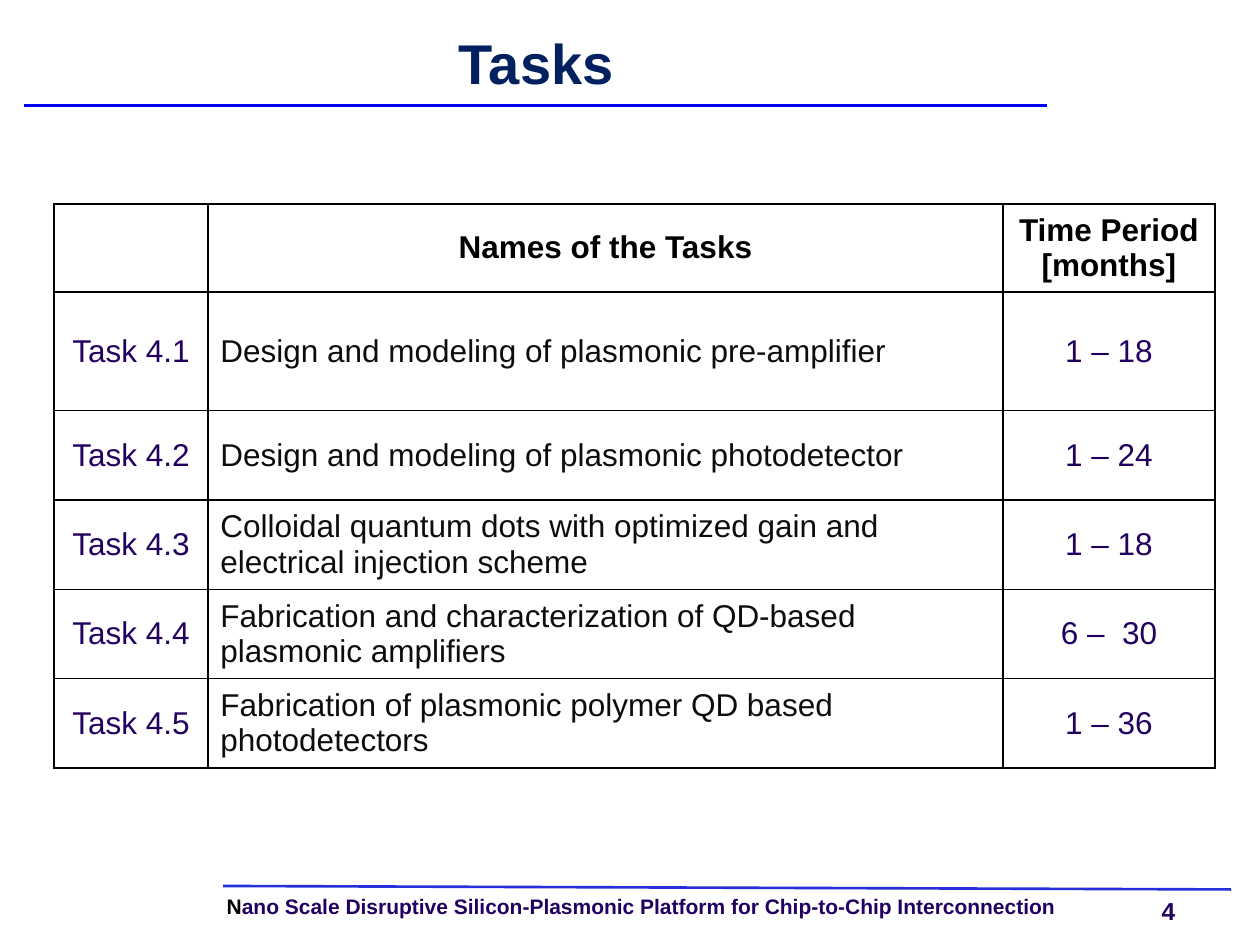
from dataclasses import dataclass

from lxml import etree
from pptx import Presentation
from pptx import util as u
from pptx.dml.color import RGBColor
from pptx.enum import shapes, text
from pptx.oxml import ns


@dataclass
class Theme:
    font: str = "Arial"
    title: str = "002060"
    accent: str = "220060"
    body: str = "0D0D0D"
    black: str = "000000"
    title_rule: str = "0000FF"
    footer_rule: str = "262FDA"
    title_size: int = 32
    table_size: int = 18
    number_size: int = 14
    footer_size: int = 12


theme = Theme()


def style(font, size, color, bold):
    font.name = theme.font
    font.size = u.Pt(size)
    font.bold = bold
    font.color.rgb = RGBColor.from_string(color)


def clear_margins(frame):
    frame.margin_left = frame.margin_right = 0
    frame.margin_top = frame.margin_bottom = 0


deck = Presentation()
deck.slide_width, deck.slide_height = u.Cm(25.4), u.Cm(19.05)
page = deck.slides.add_slide(deck.slide_layouts[5])

# Footer text and page number
footer = page.shapes.add_textbox(u.Cm(4.57), u.Cm(18.06), u.Cm(18.14), u.Cm(0.46))
clear_margins(footer.text_frame)
footer.text_frame.word_wrap = True
para = footer.text_frame.paragraphs[0]
para.line_spacing = 0.9
for words, color in (
    ("N", theme.black),
    ("ano Scale Disruptive Silicon-Plasmonic Platform for Chip-to-Chip Interconnection", theme.accent),
):
    span = para.add_run()
    span.text = words
    style(span.font, theme.footer_size, color, True)

number = page.shapes.add_textbox(u.Cm(23.42), u.Cm(18.06), u.Cm(1.02), u.Cm(0.58))
clear_margins(number.text_frame)
number.text_frame.word_wrap = False
number.text_frame.text = "4"
style(number.text_frame.paragraphs[0].runs[0].font, theme.number_size, theme.accent, True)

# Rules above the footer and under the title
for x1, y1, x2, y2, color in (
    (4.5, 17.86, 24.82, 17.93, theme.footer_rule),
    (0.48, 2.13, 21.11, 2.13, theme.title_rule),
):
    rule = page.shapes.add_connector(
        shapes.MSO_CONNECTOR.STRAIGHT, u.Cm(x1), u.Cm(y1), u.Cm(x2), u.Cm(y2))
    rule.line.color.rgb = RGBColor.from_string(color)
    rule.line.width = u.Pt(1.5)
    etree.SubElement(rule._element.spPr, ns.qn("a:effectLst"))

# Title
title = page.shapes.title
title.left, title.top = u.Cm(0.51), u.Cm(0.51)
title.width, title.height = u.Cm(20.6), u.Cm(1.7)
frame = title.text_frame
clear_margins(frame)
frame.auto_size = text.MSO_AUTO_SIZE.NONE
frame.vertical_anchor = text.MSO_ANCHOR.MIDDLE
frame.text = "Tasks"
para = frame.paragraphs[0]
para.alignment = text.PP_ALIGN.CENTER
para.line_spacing = u.Pt(32)
style(para.runs[0].font, theme.title_size, theme.title, True)

# Task table
rows = [
    ("", "Names of the Tasks", "Time Period [months]"),
    ("Task 4.1", "Design and modeling of plasmonic pre-amplifier", "1 – 18"),
    ("Task 4.2", "Design and modeling of plasmonic photodetector", "1 – 24"),
    ("Task 4.3", "Colloidal quantum dots with optimized gain and electrical injection scheme", "1 – 18"),
    ("Task 4.4", "Fabrication and characterization of QD-based plasmonic amplifiers", "6 –  30"),
    ("Task 4.5", "Fabrication of plasmonic polymer QD based photodetectors", "1 – 36"),
]
widths = [3.1, 16.03, 4.27]
heights = [1.68, 2.39] + [1.8] * 4
table = page.shapes.add_table(
    len(rows), len(widths), u.Cm(1.09), u.Cm(4.11),
    u.Cm(sum(widths)), u.Cm(sum(heights))).table
table.first_row = table.horz_banding = False
for column, width in zip(table.columns, widths):
    column.width = u.Cm(width)

for r, (row, height) in enumerate(zip(rows, heights)):
    table.rows[r].height = u.Cm(height)
    for c, words in enumerate(row):
        cell = table.cell(r, c)
        cell.vertical_anchor = text.MSO_ANCHOR.MIDDLE
        # Borders come before the fill in the cell properties
        properties = cell._tc.get_or_add_tcPr()
        for side in ("a:lnL", "a:lnR", "a:lnT", "a:lnB"):
            border = etree.SubElement(properties, ns.qn(side), w=str(u.Pt(1)))
            fill = etree.SubElement(border, ns.qn("a:solidFill"))
            etree.SubElement(fill, ns.qn("a:srgbClr"), val=theme.black)
        cell.fill.background()

        cell.text_frame.text = words
        para = cell.text_frame.paragraphs[0]
        is_name = r > 0 and c == 1
        para.alignment = text.PP_ALIGN.LEFT if is_name else text.PP_ALIGN.CENTER
        color = theme.black if r == 0 else theme.body if is_name else theme.accent
        for span in para.runs:
            style(span.font, theme.table_size, color, r == 0)

deck.save("out.pptx")
